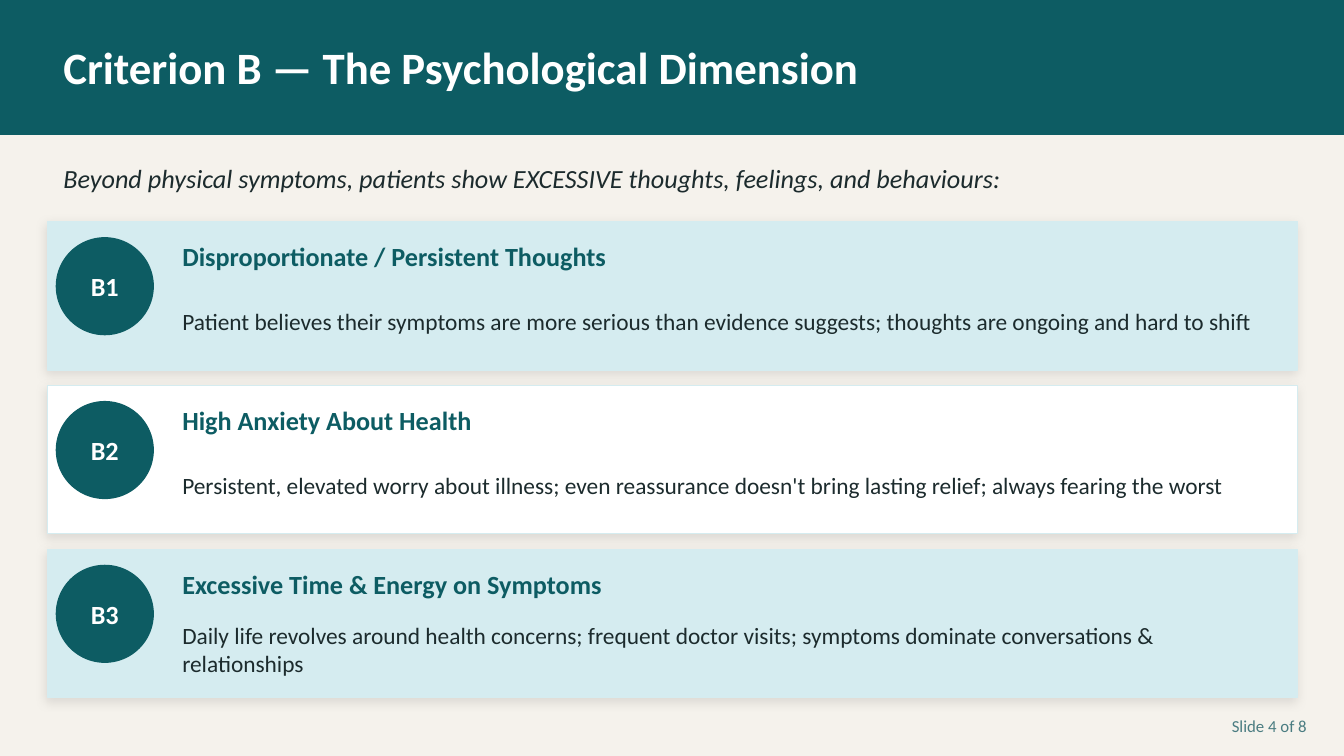
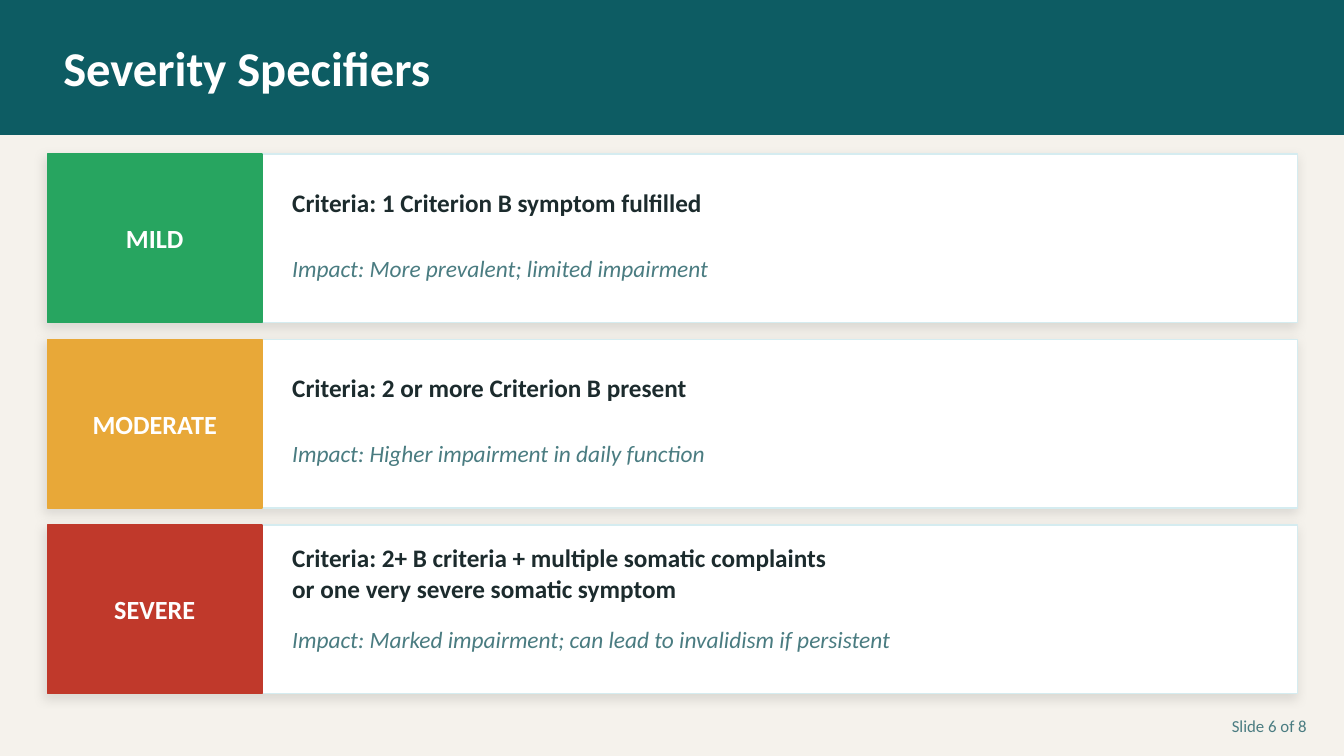
from dataclasses import dataclass

from lxml import etree
from pptx import Presentation
from pptx import util as u
from pptx.dml import color
from pptx.enum import shapes, text
from pptx.oxml import ns


# Colours and type styles
@dataclass(frozen=True)
class Theme:
    teal: str = "0D5C63"
    pale: str = "D5ECF0"
    cream: str = "F5F2EC"
    white: str = "FFFFFF"
    ink: str = "1C2B2D"
    muted: str = "4A7C81"
    green: str = "27A560"
    amber: str = "E8A838"
    red: str = "C0392B"
    font: str = "Calibri"

    def style(self, size, tone, **more):
        return {"name": self.font, "size": u.Pt(size), "tone": tone, **more}

    def title(self, size):
        return self.style(size, self.white, bold=True)

    @property
    def label(self):
        return self.style(18.7, self.white, bold=True)

    @property
    def lead(self):
        return self.style(18.7, self.ink, italic=True)

    @property
    def head(self):
        return self.style(18.7, self.teal, bold=True)

    @property
    def body(self):
        return self.style(16.7, self.ink)

    @property
    def rule(self):
        return self.style(18, self.ink, bold=True)

    @property
    def impact(self):
        return self.style(16.7, self.muted, italic=True)

    @property
    def foot(self):
        return self.style(12, self.muted)


T = Theme()
WIDE, HIGH = 13.33, 7.5
LEFT, SPAN = 0.47, 12.4
ALIGN = text.PP_ALIGN
KIND = shapes.MSO_SHAPE


def rgb(tone):
    return color.RGBColor.from_string(tone)


def inches(box):
    return [u.Inches(side) for side in box]


def tops(first, last, count):
    """Evenly spaced top edges."""
    return [first + (last - first) * i / (count - 1) for i in range(count)]


# Text, one paragraph per line
def write(shape, words, style, align=ALIGN.LEFT):
    frame = shape.text_frame
    frame.word_wrap = True
    frame.vertical_anchor = text.MSO_ANCHOR.MIDDLE
    for i, line in enumerate(words.split("\n")):
        para = frame.paragraphs[0] if i == 0 else frame.add_paragraph()
        para.alignment = align
        run = para.add_run()
        run.text = line
        for key, value in style.items():
            if key == "tone":
                run.font.color.rgb = rgb(value)
            else:
                setattr(run.font, key, value)


def note(slide, box, words, style, align=ALIGN.LEFT):
    write(slide.shapes.add_textbox(*inches(box)), words, style, align)


# Filled shapes
def block(slide, box, fill, line=None, kind=KIND.RECTANGLE):
    shape = slide.shapes.add_shape(kind, *inches(box))
    shape.shadow.inherit = False
    shape.fill.solid()
    shape.fill.fore_color.rgb = rgb(fill)
    shape.line.color.rgb = rgb(line or fill)
    shape.line.width = u.Pt(1)
    return shape


def badge(slide, box, words, fill, kind=KIND.RECTANGLE):
    shape = block(slide, box, fill, kind=kind)
    for side in ("left", "right", "top", "bottom"):
        setattr(shape.text_frame, "margin_" + side, 0)
    write(shape, words, T.label, ALIGN.CENTER)


def card(slide, top, height, fill):
    """Full-width panel with a soft shadow."""
    shape = block(slide, (LEFT, top, SPAN, height), fill, T.pale)
    effects = shape._element.spPr.find(ns.qn("a:effectLst"))
    shade = etree.SubElement(
        effects, ns.qn("a:outerShdw"), blurRad=str(u.Pt(8)),
        dist=str(u.Pt(3)), dir=str(135 * 60000), algn="bl", rotWithShape="0")
    tint = etree.SubElement(shade, ns.qn("a:srgbClr"), val="000000")
    etree.SubElement(tint, ns.qn("a:alpha"), val="10000")


# Shared frame: title band and page mark
def page(deck, title, size, number):
    slide = deck.slides.add_slide(deck.slide_layouts[6])
    block(slide, (0, 0, WIDE, 1.33), T.teal)
    note(slide, (0.53, 0.13, 12.27, 1.07), title, T.title(size))
    note(slide, (11.33, 7.07, 1.73, 0.27), f"Slide {number} of 8",
         T.foot, ALIGN.RIGHT)
    return slide


# Row of the criterion list
def symptom(slide, top, fill, code, head, body):
    card(slide, top, 1.47, fill)
    badge(slide, (0.56, top + 0.16, 0.96, 0.96), code, T.teal, KIND.OVAL)
    note(slide, (1.71, top + 0.11, 10.8, 0.47), head, T.head)
    note(slide, (1.71, top + 0.64, 10.8, 0.69), body, T.body)


# Row of the severity list
def level(slide, top, fill, name, rule, impact):
    card(slide, top, 1.67, T.white)
    badge(slide, (LEFT, top, 2.13, 1.67), name, fill)
    note(slide, (2.8, top + 0.14, 9.87, 0.67), "Criteria: " + rule, T.rule)
    note(slide, (2.8, top + 0.83, 9.87, 0.6), "Impact: " + impact, T.impact)


SYMPTOMS = [
    (T.pale, "B1", "Disproportionate / Persistent Thoughts",
     "Patient believes their symptoms are more serious than evidence "
     "suggests; thoughts are ongoing and hard to shift"),
    (T.white, "B2", "High Anxiety About Health",
     "Persistent, elevated worry about illness; even reassurance doesn't "
     "bring lasting relief; always fearing the worst"),
    (T.pale, "B3", "Excessive Time & Energy on Symptoms",
     "Daily life revolves around health concerns; frequent doctor visits; "
     "symptoms dominate conversations & relationships"),
]

LEVELS = [
    (T.green, "MILD", "1 Criterion B symptom fulfilled",
     "More prevalent; limited impairment"),
    (T.amber, "MODERATE", "2 or more Criterion B present",
     "Higher impairment in daily function"),
    (T.red, "SEVERE", "2+ B criteria + multiple somatic complaints\n"
     "or one very severe somatic symptom",
     "Marked impairment; can lead to invalidism if persistent"),
]


def main():
    deck = Presentation()
    deck.slide_width, deck.slide_height = inches((WIDE, HIGH))
    back = deck.slide_master.background.fill
    back.solid()
    back.fore_color.rgb = rgb(T.cream)

    # Psychological criteria
    slide = page(deck, "Criterion B — The Psychological Dimension", 32, 4)
    note(slide, (0.53, 1.47, 12.27, 0.6),
         "Beyond physical symptoms, patients show EXCESSIVE thoughts, "
         "feelings, and behaviours:", T.lead)
    for top, row in zip(tops(2.2, 5.45, len(SYMPTOMS)), SYMPTOMS):
        symptom(slide, top, *row)

    # Severity levels
    slide = page(deck, "Severity Specifiers", 34.7, 6)
    for top, row in zip(tops(1.53, 5.21, len(LEVELS)), LEVELS):
        level(slide, top, *row)

    deck.save("out.pptx")


if __name__ == "__main__":
    main()
